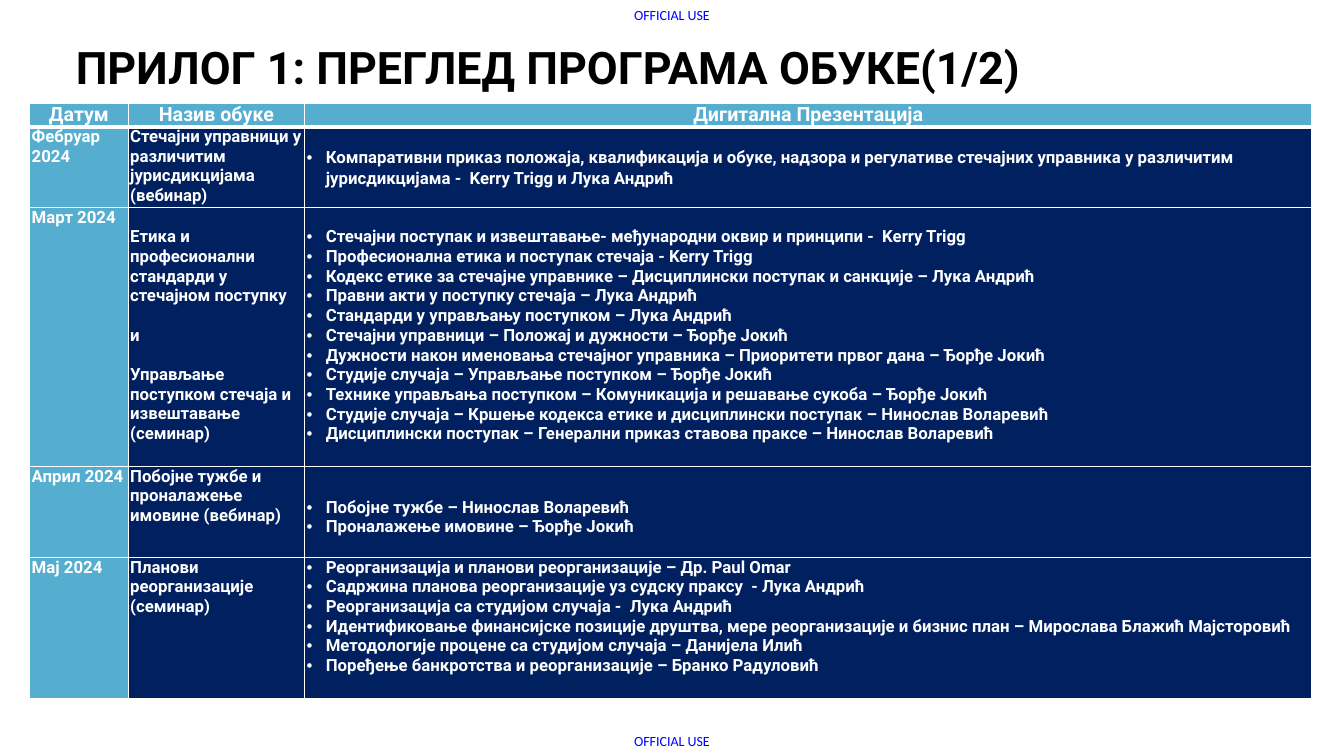
from lxml.etree import SubElement
from pptx import Presentation
from pptx.dml.color import RGBColor
from pptx.enum.text import MSO_ANCHOR, PP_ALIGN
from pptx.oxml.ns import qn
from pptx.util import Cm, Pt

COLORS = {"white": "FFFFFF", "black": "000000", "label": "0000FF",
          "light": "55AECF", "navy": "002060"}
LABEL = "OFFICIAL USE"
LABEL_TOPS = [0.16, 18.45]
TITLE = "ПРИЛОГ 1: ПРЕГЛЕД ПРОГРАМА ОБУКЕ(1/2)"
HEADERS = ["Датум", "Назив обуке", "Дигитална Презентација"]
TRAININGS = [
    {"date": "Фебруар 2024",
     "name": ["Стечајни управници у различитим јурисдикцијама", "(вебинар)"],
     "topics": [
         "Компаративни приказ положаја, квалификација и обуке, надзора и регулативе стечајних управника у различитим јурисдикцијама -  Kerry Trigg и Лука Андрић",
     ],
     "height": 2.0, "topics_top": 0.5,
     "topics_format": {"line_spacing": 1.07, "space_after": Pt(8)}},
    {"date": "Март 2024",
     "name": ["Етика и професионални стандарди у стечајном поступку", "и",
              "Управљање поступком стечаја и извештавање (семинар)"],
     "topics": [
         "Стечајни поступак и извештавање- међународни оквир и принципи -  Kerry Trigg",
         "Професионална етика и поступак стечаја - Kerry Trigg",
         "Кодекс етике за стечајне управнике – Дисциплински поступак и санкције – Лука Андрић",
         "Правни акти у поступку стечаја – Лука Андрић",
         "Стандарди у управљању поступком – Лука Андрић",
         "Стечајни управници – Положај и дужности – Ђорђе Јокић",
         "Дужности након именовања стечајног управника – Приоритети првог дана – Ђорђе Јокић",
         "Студије случаја – Управљање поступком – Ђорђе Јокић",
         "Технике управљања поступком – Комуникација и решавање сукоба – Ђорђе Јокић",
         "Студије случаја – Кршење кодекса етике и дисциплински поступак – Нинослав Воларевић",
         "Дисциплински поступак – Генерални приказ ставова праксе – Нинослав Воларевић",
     ],
     "height": 6.53, "name_top": 0.5, "name_gap": 14, "topics_top": 0.5},
    {"date": "Април 2024",
     "name": ["Побојне тужбе и проналажење имовине (вебинар)"],
     "topics": ["Побојне тужбе – Нинослав Воларевић",
                "Проналажење имовине – Ђорђе Јокић"],
     "height": 2.29, "topics_top": 0.78},
    {"date": "Мај 2024",
     "name": ["Планови реорганизације (семинар)"],
     "topics": [
         "Реорганизација и планови реорганизације – Др. Paul Omar",
         "Садржина планова реорганизације уз судску праксу  - Лука Андрић",
         "Реорганизација са студијом случаја -  Лука Андрић",
         "Идентификовање финансијске позиције друштва, мере реорганизације и бизнис план – Мирослава Блажић Мајсторовић",
         "Методологије процене са студијом случаја – Данијела Илић",
         "Поређење банкротства и реорганизације – Бранко Радуловић",
     ],
     "height": 3.55},
]
COLUMN_WIDTHS = [2.48, 4.45, 25.38]
HEADER_HEIGHT = 0.59
INDENT = Cm(0.48)
NO_MARGINS = dict.fromkeys(
    ["margin_left", "margin_top", "margin_right", "margin_bottom"], 0)


def set_all(target, values):
    for name, value in values.items():
        setattr(target, name, value)


def write(frame, lines, size, color="white", font="Roboto", bold=True,
          paragraph_format=None, gap=0, bullets=False):
    for index, line in enumerate(lines):
        paragraph = frame.add_paragraph() if index else frame.paragraphs[0]
        set_all(paragraph, paragraph_format or {})
        if index and gap:
            paragraph.space_before = Pt(gap)
        if bullets:
            properties = paragraph._p.get_or_add_pPr()
            properties.set("marL", str(INDENT))
            properties.set("indent", str(-INDENT))
            SubElement(properties, qn("a:buFont"), typeface="Arial")
            SubElement(properties, qn("a:buChar"), char="•")
        run = paragraph.add_run()
        run.text = line
        set_all(run.font, {"size": Pt(size), "name": font, "bold": bold})
        run.font.color.rgb = RGBColor.from_string(COLORS[color])


def add_text(slide, box, text, frame_format, **text_format):
    shape = slide.shapes.add_textbox(*map(Cm, box))
    set_all(shape.text_frame, frame_format)
    write(shape.text_frame, [text], **text_format)


def style_cell(cell, fill, top=0, top_line=1, bottom_line=1):
    set_all(cell, {"margin_left": Cm(0.05), "margin_right": Cm(0.05),
                   "margin_top": Cm(top), "margin_bottom": 0})
    properties = cell._tc.get_or_add_tcPr()
    widths = {"lnL": 1, "lnR": 1, "lnT": top_line, "lnB": bottom_line}
    for side, width in widths.items():
        line = SubElement(properties, qn(f"a:{side}"), w=str(Pt(width)))
        solid = SubElement(line, qn("a:solidFill"))
        SubElement(solid, qn("a:srgbClr"), val=COLORS["white"])
    cell.fill.solid()
    cell.fill.fore_color.rgb = RGBColor.from_string(COLORS[fill])


def add_trainings(slide):
    heights = [HEADER_HEIGHT] + [training["height"] for training in TRAININGS]
    table = slide.shapes.add_table(
        len(heights), len(HEADERS), Cm(0.75), Cm(2.6),
        Cm(sum(COLUMN_WIDTHS)), Cm(sum(heights))).table
    for column, width in zip(table.columns, COLUMN_WIDTHS):
        column.width = Cm(width)
    for row, height in zip(table.rows, heights):
        row.height = Cm(height)
    for index, header in enumerate(HEADERS):
        cell = table.cell(0, index)
        style_cell(cell, "light", bottom_line=3)
        write(cell.text_frame, [header], 14,
              paragraph_format={"alignment": PP_ALIGN.CENTER})
    for row, training in enumerate(TRAININGS, 1):
        top_line = 3 if row == 1 else 1
        date, name, topics = (table.cell(row, index) for index in range(3))
        style_cell(date, "light", top_line=top_line)
        style_cell(name, "navy", training.get("name_top", 0), top_line)
        style_cell(topics, "navy", training.get("topics_top", 0), top_line)
        write(date.text_frame, [training["date"]], 12)
        write(name.text_frame, training["name"], 12,
              gap=training.get("name_gap", 0))
        write(topics.text_frame, training["topics"], 12, bullets=True,
              paragraph_format=training.get("topics_format"))


def main():
    presentation = Presentation()
    set_all(presentation, {"slide_width": Cm(33.87), "slide_height": Cm(19.05)})
    slide = presentation.slides.add_slide(presentation.slide_layouts[6])
    for top in LABEL_TOPS:
        add_text(slide, (15.98, top, 2.01, 0.43), LABEL,
                 {**NO_MARGINS, "word_wrap": False}, size=10,
                 color="label", font="Calibri", bold=False)
    add_text(slide, (1.66, 1.07, 31.85, 1.37), TITLE,
             {"word_wrap": True, "vertical_anchor": MSO_ANCHOR.MIDDLE},
             size=32, color="black", paragraph_format={"line_spacing": 0.9})
    add_trainings(slide)
    presentation.save("out.pptx")


if __name__ == "__main__":
    main()
